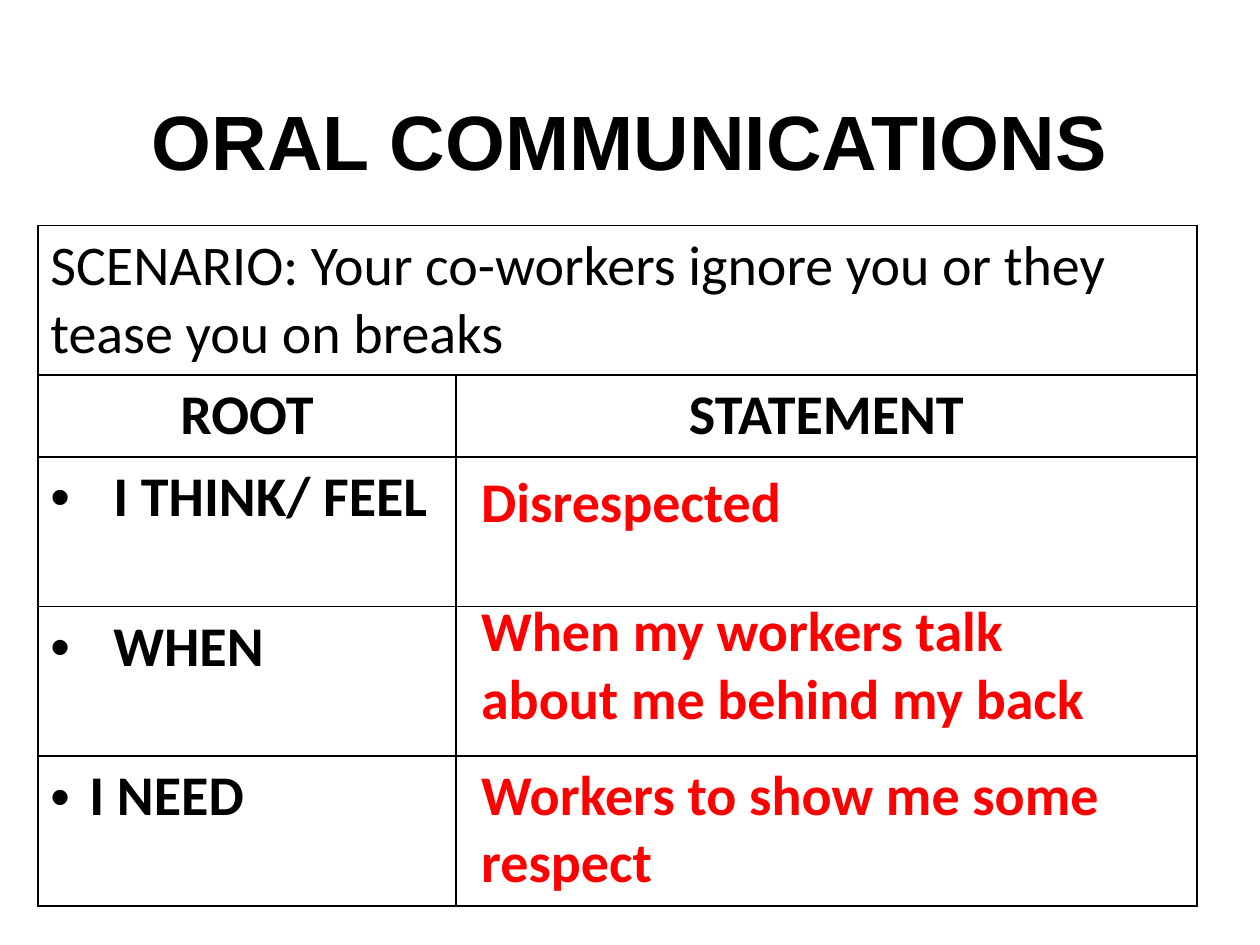
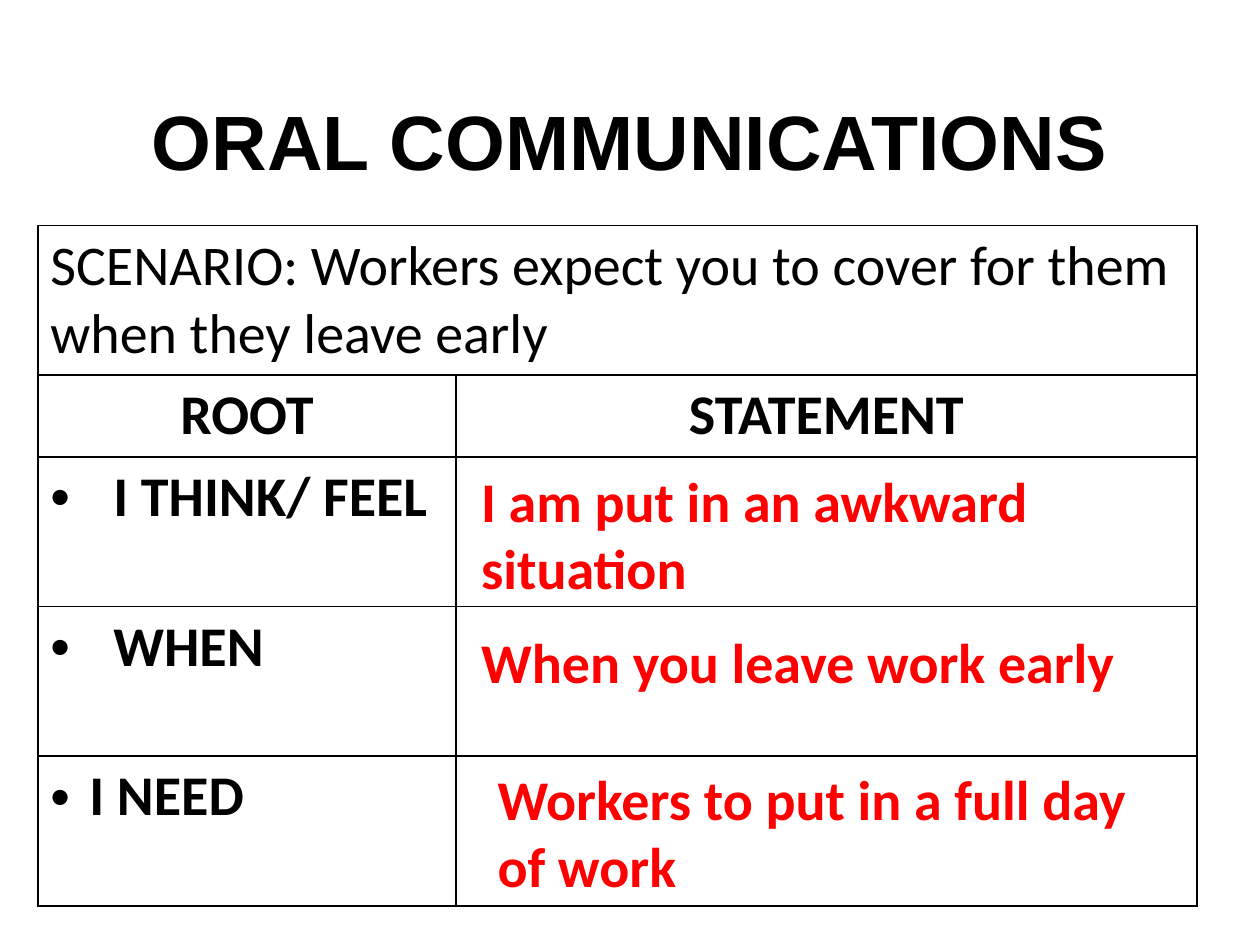
import dataclasses

import lxml.etree
import pptx
import pptx.dml.color
import pptx.enum.text
import pptx.oxml.ns
import pptx.util

BLACK = pptx.dml.color.RGBColor(0x00, 0x00, 0x00)
WHITE = pptx.dml.color.RGBColor(0xFF, 0xFF, 0xFF)
RED = pptx.dml.color.RGBColor(0xFF, 0x00, 0x00)

# The page is a grid of 100 columns by 75 rows of equal square units.
UNIT = pptx.util.Inches(0.1)
PAGE_COLUMNS, PAGE_ROWS = 100, 75

TITLE = "ORAL COMMUNICATIONS"
TITLE_AREA = (5, 4.8, 90, 12.5)
TABLE_LEFT, TABLE_TOP = 3, 17.9
COLUMN_WIDTHS = (33.2, 58.8)
TALL_ROW, SHORT_ROW = 11.88, 6.48
ROW_HEIGHTS = (TALL_ROW, SHORT_ROW, TALL_ROW, TALL_ROW, TALL_ROW)
HEADINGS = ("ROOT", "STATEMENT")
BORDER_WIDTH = pptx.util.Pt(1)

CENTER = pptx.enum.text.PP_ALIGN.CENTER
LEFT = pptx.enum.text.PP_ALIGN.LEFT
MIDDLE = pptx.enum.text.MSO_ANCHOR.MIDDLE


@dataclasses.dataclass(frozen=True)
class Root:
    text: str
    indent: float


@dataclasses.dataclass(frozen=True)
class Statement:
    text: str
    left: float
    top: float
    width: float
    height: float


@dataclasses.dataclass(frozen=True)
class Exercise:
    scenario: str
    statements: tuple[Statement, ...]


ROOTS = (Root("I THINK/ FEEL", 5), Root("WHEN", 5), Root("I NEED", 3.1))

EXERCISES = (
    Exercise(
        "Your co-workers ignore you or they tease you on breaks",
        (
            Statement("Disrespected", 37.2, 36.5, 57.8, 6.4),
            Statement("When my workers talk about me behind my back", 37.2, 46.8, 52.8, 11.8),
            Statement("Workers to show me some respect", 37.2, 59.8, 56, 11.8),
        ),
    ),
    Exercise(
        "Workers expect you to cover for them when they leave early",
        (
            Statement("I am put in an awkward situation", 37.2, 36.5, 57.8, 11.8),
            Statement("When you leave work early", 37.2, 49.3, 52.8, 6.4),
            Statement("Workers to put in a full day of work", 38.5, 60.2, 53.9, 14.8),
        ),
    ),
)


def units(count: float) -> pptx.util.Emu:
    return pptx.util.Emu(round(count * UNIT))


def write(frame, text: str, *, size: float = 32, font: str = "Calibri",
          color: pptx.dml.color.RGBColor = BLACK, bold: bool = True, align=LEFT):
    """Fill the frame with one formatted paragraph and return that paragraph."""
    frame.word_wrap = True
    para = frame.paragraphs[0]
    para.alignment = align
    span = para.add_run()
    span.text = text
    span.font.size = pptx.util.Pt(size)
    span.font.name = font
    span.font.bold = bold
    span.font.color.rgb = color
    return para


def add_bullet(para, indent: float) -> None:
    properties = para._p.get_or_add_pPr()
    properties.set("marL", str(units(indent)))
    properties.set("indent", str(-units(indent)))
    qn = pptx.oxml.ns.qn
    lxml.etree.SubElement(properties, qn("a:buFont")).set("typeface", "Arial")
    lxml.etree.SubElement(properties, qn("a:buChar")).set("char", "•")


def style_cell(cell) -> None:
    """Give the cell a white fill and a thin black border on each side."""
    cell.fill.solid()
    cell.fill.fore_color.rgb = WHITE
    qn = pptx.oxml.ns.qn
    properties = cell._tc.get_or_add_tcPr()
    for position, side in enumerate(("lnL", "lnR", "lnT", "lnB")):
        line = lxml.etree.Element(qn(f"a:{side}"), w=str(BORDER_WIDTH))
        fill = lxml.etree.SubElement(line, qn("a:solidFill"))
        lxml.etree.SubElement(fill, qn("a:srgbClr")).set("val", str(BLACK))
        properties.insert(position, line)


def add_title(page) -> None:
    title = page.shapes.title
    title.left, title.top, title.width, title.height = map(units, TITLE_AREA)
    title.text_frame.vertical_anchor = MIDDLE
    write(title.text_frame, TITLE, size=44, font="Arial", align=CENTER)


def add_scenario_table(page, scenario: str) -> None:
    table = page.shapes.add_table(
        len(ROW_HEIGHTS), len(COLUMN_WIDTHS), units(TABLE_LEFT), units(TABLE_TOP),
        units(sum(COLUMN_WIDTHS)), units(sum(ROW_HEIGHTS))).table
    table.first_row = False
    table.horz_banding = False
    for column, width in zip(table.columns, COLUMN_WIDTHS):
        column.width = units(width)
    for row, height in zip(table.rows, ROW_HEIGHTS):
        row.height = units(height)
    for cell in table.iter_cells():
        style_cell(cell)

    table.cell(0, 0).merge(table.cell(0, 1))
    write(table.cell(0, 0).text_frame, f"SCENARIO: {scenario}", bold=False)
    for column, heading in enumerate(HEADINGS):
        write(table.cell(1, column).text_frame, heading, align=CENTER)
    for row, root in enumerate(ROOTS, start=2):
        add_bullet(write(table.cell(row, 0).text_frame, root.text), root.indent)


def add_statement(page, statement: Statement) -> None:
    box = page.shapes.add_textbox(
        units(statement.left), units(statement.top),
        units(statement.width), units(statement.height))
    write(box.text_frame, statement.text, color=RED)
    box.text_frame.auto_size = pptx.enum.text.MSO_AUTO_SIZE.SHAPE_TO_FIT_TEXT


def main() -> None:
    deck = pptx.Presentation()
    deck.slide_width = units(PAGE_COLUMNS)
    deck.slide_height = units(PAGE_ROWS)
    title_only = deck.slide_layouts.get_by_name("Title Only")
    for exercise in EXERCISES:
        page = deck.slides.add_slide(title_only)
        add_title(page)
        add_scenario_table(page, exercise.scenario)
        for statement in exercise.statements:
            add_statement(page, statement)
    deck.save("out.pptx")


if __name__ == "__main__":
    main()
